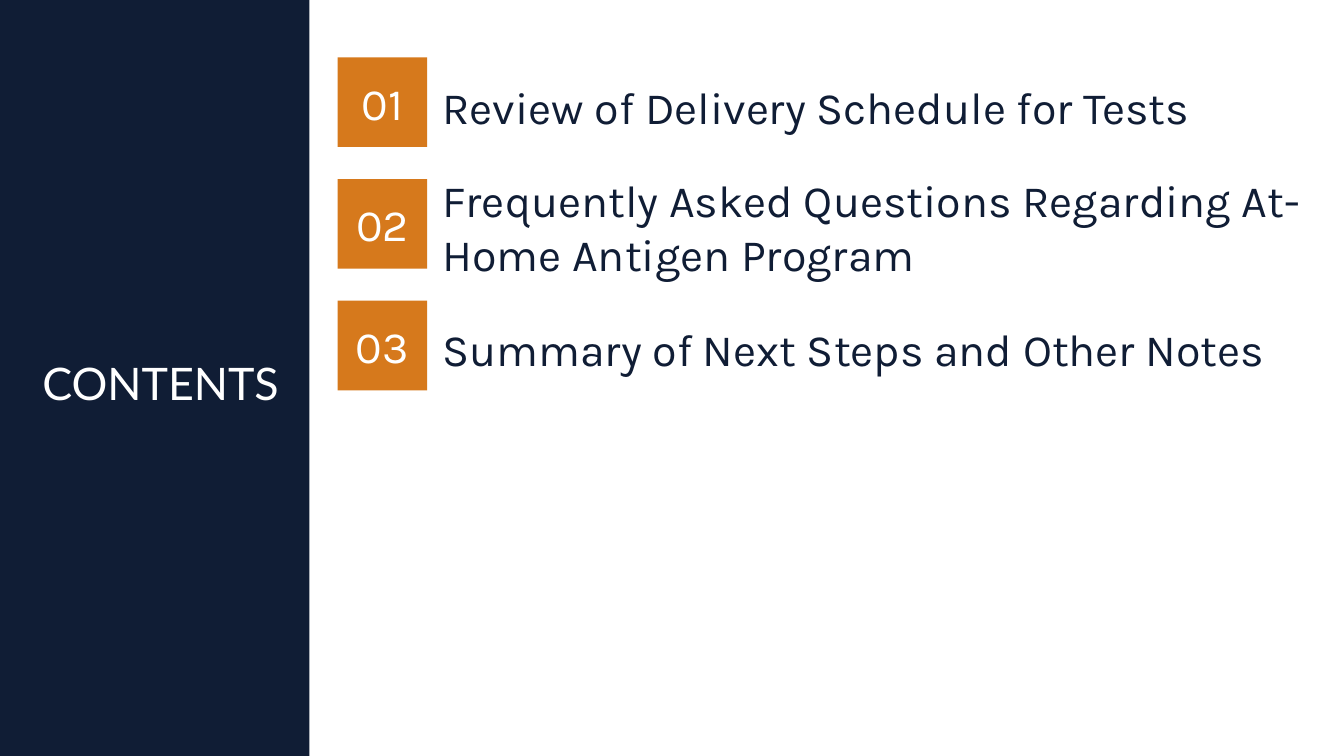
from pptx import Presentation
from pptx.dml.color import RGBColor
from pptx.enum.shapes import MSO_SHAPE
from pptx.enum.text import MSO_ANCHOR, MSO_AUTO_SIZE, PP_ALIGN
from pptx.util import Pt

COLORS = {"navy": "101D35", "orange": "D6791C", "white": "FFFFFF"}
ITEMS = [
    ("Review of Delivery Schedule for Tests", 43.9),
    ("Frequently Asked Questions Regarding At-Home Antigen Program", 129.6),
    ("Summary of Next Steps and Other Notes", 216.8),
]
BADGE_LEFT, BADGE_TOP, BADGE_SIZE, PITCH = 241.2, 41, 64, 86.9
TEXT_LEFT, TEXT_WIDTH = 308.9, 628.6


def color(name):
    """Return the named palette colour."""
    return RGBColor.from_string(COLORS[name])


def set_text(s, text, font, fill, align=PP_ALIGN.LEFT):
    """Write one vertically centred 32-point paragraph."""
    tf = s.text_frame
    tf.text = text
    tf.word_wrap = True
    tf.auto_size = MSO_AUTO_SIZE.NONE
    tf.vertical_anchor = MSO_ANCHOR.MIDDLE
    p = tf.paragraphs[0]
    p.alignment = align
    r = p.runs[0]
    r.font.name = font
    r.font.size = Pt(32)
    r.font.color.rgb = color(fill)
    return p


def add_block(slide, left, top, width, height, fill):
    """Add a plain filled rectangle."""
    s = slide.shapes.add_shape(
        MSO_SHAPE.RECTANGLE, Pt(left), Pt(top), Pt(width), Pt(height))
    s.shadow.inherit = False
    s.fill.solid()
    s.fill.fore_color.rgb = color(fill)
    s.line.fill.background()
    return s


def add_title(slide, text):
    """Place the title on a full-height side panel."""
    panel = add_block(slide, 0, 0, 221, 540, "navy")
    s = slide.shapes.title
    s._element.addprevious(panel._element)
    s.left, s.top, s.width, s.height = Pt(23), Pt(223.2), Pt(198.7), Pt(104.4)
    set_text(s, text, "Lato", "white").line_spacing = 0.9


def add_item(slide, index, text, text_top):
    """Add a numbered badge and its agenda text."""
    badge = add_block(slide, BADGE_LEFT, BADGE_TOP + index * PITCH,
                      BADGE_SIZE, BADGE_SIZE, "orange")
    set_text(badge, f"{index + 1:02d}", "Karla", "white", PP_ALIGN.CENTER)
    label = slide.shapes.add_textbox(
        Pt(TEXT_LEFT), Pt(text_top), Pt(TEXT_WIDTH), Pt(BADGE_SIZE))
    set_text(label, text, "Karla", "navy")


def main():
    """Build the contents slide."""
    prs = Presentation()
    prs.slide_width, prs.slide_height = Pt(960), Pt(540)
    slide = prs.slides.add_slide(prs.slide_layouts[5])
    add_title(slide, "CONTENTS")
    for index, (text, text_top) in enumerate(ITEMS):
        add_item(slide, index, text, text_top)
    prs.save("out.pptx")


if __name__ == "__main__":
    main()
